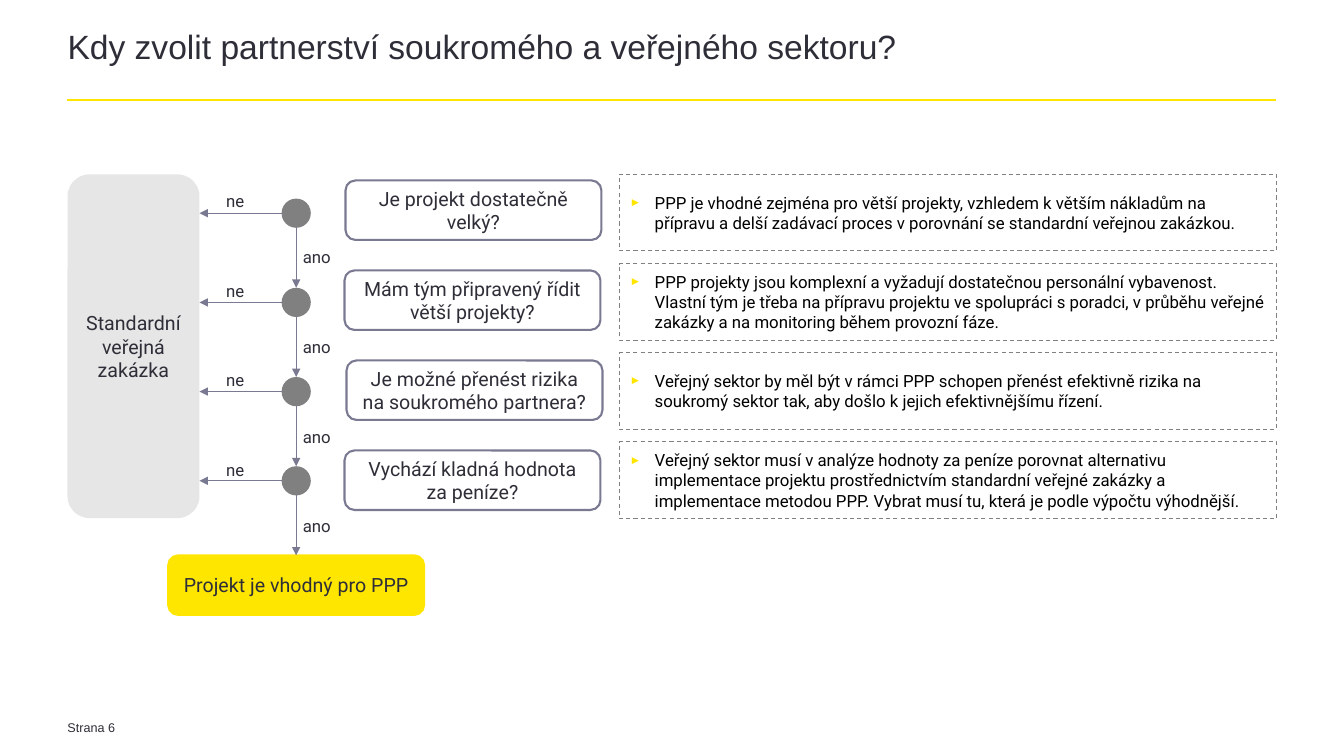
from dataclasses import dataclass
from typing import Optional

from lxml.etree import SubElement
from pptx import Presentation
from pptx.dml.color import RGBColor
from pptx.enum.dml import MSO_LINE
from pptx.enum.shapes import MSO_CONNECTOR, MSO_SHAPE
from pptx.enum.text import MSO_ANCHOR, MSO_AUTO_SIZE, PP_ALIGN
from pptx.oxml.ns import qn
from pptx.util import Inches, Pt

COLORS = {
    "dark": "2E2E38",
    "black": "000000",
    "yellow": "FFE600",
    "gray": "808080",
    "light": "E6E6E6",
    "violet": "797991",
}

LEFT, RIGHT = 0.67, 12.67
AXIS_X = 2.94
FIRST_Y = 2.115
PITCH = 0.885
DOT = 0.29
QUESTION_W, QUESTION_H = 2.54, 0.59
QUESTION_PITCH = 0.893
NOTE_H = 0.76
STANDARD_W = 1.31
RESULT_Y = 5.51


@dataclass
class Step:
    question: str
    note: str
    question_x: float


STEPS = [
    Step("Je projekt dostatečně velký?",
         "PPP je vhodné zejména pro větší projekty, vzhledem k větším nákladům na přípravu "
         "a delší zadávací proces v porovnání se standardní veřejnou zakázkou.", 3.43),
    Step("Mám tým připravený řídit větší projekty?",
         "PPP projekty jsou komplexní a vyžadují dostatečnou personální vybavenost. Vlastní tým "
         "je třeba na přípravu projektu ve spolupráci s poradci, v průběhu veřejné zakázky "
         "a na monitoring během provozní fáze.", 3.42),
    Step("Je možné přenést rizika na soukromého partnera?",
         "Veřejný sektor by měl být v rámci PPP schopen přenést efektivně rizika na soukromý "
         "sektor tak, aby došlo k jejich efektivnějšímu řízení.", 3.44),
    Step("Vychází kladná hodnota za peníze?",
         "Veřejný sektor musí v analýze hodnoty za peníze porovnat alternativu implementace "
         "projektu prostřednictvím standardní veřejné zakázky a implementace metodou PPP. "
         "Vybrat musí tu, která je podle výpočtu výhodnější.", 3.42),
]


def rgb(name: str) -> RGBColor:
    return RGBColor.from_string(COLORS[name])


def set_text(sp, text: str, size: float, color: str = "dark", font: str = "Roboto",
             align=PP_ALIGN.CENTER, anchor=MSO_ANCHOR.MIDDLE):
    tf = sp.text_frame
    tf.word_wrap = True
    tf.vertical_anchor = anchor
    tf.text = text
    p = tf.paragraphs[0]
    p.alignment = align
    f = p.runs[0].font
    f.name, f.size = font, Pt(size)
    f.color.rgb = rgb(color)
    return p


def set_insets(sp, top: float = 0) -> None:
    tf = sp.text_frame
    tf.margin_left = tf.margin_right = tf.margin_bottom = 0
    tf.margin_top = Inches(top)


def add_box(slide, kind, x: float, y: float, w: float, h: float,
            fill: Optional[str] = None, line: Optional[str] = None, width: float = 1.5):
    sp = slide.shapes.add_shape(kind, Inches(x), Inches(y), Inches(w), Inches(h))
    sp.shadow.inherit = False
    if fill:
        sp.fill.solid()
        sp.fill.fore_color.rgb = rgb(fill)
    else:
        sp.fill.background()
    if line:
        sp.line.color.rgb = rgb(line)
        sp.line.width = Pt(width)
    else:
        sp.line.fill.background()
    return sp


def add_line(slide, x1: float, y1: float, x2: float, y2: float,
             color: str = "violet", width: float = 0.75, arrow: bool = True):
    cx = slide.shapes.add_connector(MSO_CONNECTOR.STRAIGHT, Inches(x1), Inches(y1),
                                    Inches(x2), Inches(y2))
    cx.line.color.rgb = rgb(color)
    cx.line.width = Pt(width)
    if arrow:
        SubElement(cx.line._get_or_add_ln(), qn("a:tailEnd"), type="triangle")
    SubElement(cx._element.spPr, qn("a:effectLst"))
    return cx


def add_label(slide, text: str, x: float, y: float, w: float = 0.53, h: float = 0.24,
              **style):
    sp = slide.shapes.add_textbox(Inches(x), Inches(y), Inches(w), Inches(h))
    set_insets(sp, 0.04)
    return set_text(sp, text, **style)


def add_bullet(p) -> None:
    pPr = p._p.get_or_add_pPr()
    pPr.set("marL", str(Inches(0.25)))
    pPr.set("indent", str(-Inches(0.25)))
    SubElement(SubElement(pPr, qn("a:buClr")), qn("a:srgbClr"), val=COLORS["yellow"])
    SubElement(pPr, qn("a:buSzPct"), val="70000")
    SubElement(pPr, qn("a:buFont"), typeface="Arial")
    SubElement(pPr, qn("a:buChar"), char="►")


def add_title(slide, text: str) -> None:
    title = slide.shapes.title
    title.left, title.top = Inches(LEFT), Inches(0.32)
    title.width, title.height = Inches(12.01), Inches(0.65)
    p = set_text(title, text, 24, font="Arial", align=PP_ALIGN.LEFT, anchor=MSO_ANCHOR.TOP)
    p.line_spacing = 0.85
    title.text_frame.auto_size = MSO_AUTO_SIZE.NONE
    set_insets(title)
    add_line(slide, LEFT, 0.99, RIGHT, 0.99, "yellow", 1.5, arrow=False)


def add_step(slide, i: int, step: Step, result) -> None:
    """Draw one decision: dot, both answers, question and explanation."""
    y = FIRST_Y + i * PITCH
    add_box(slide, MSO_SHAPE.OVAL, AXIS_X - DOT / 2, y - DOT / 2, DOT, DOT, "gray")

    question = add_box(slide, MSO_SHAPE.ROUNDED_RECTANGLE, step.question_x,
                       1.79 + i * QUESTION_PITCH, QUESTION_W, QUESTION_H, line="violet")
    set_text(question, step.question, 14)

    note = add_box(slide, MSO_SHAPE.RECTANGLE, 6.15, 1.73 + i * PITCH, RIGHT - 6.15, NOTE_H,
                   line="gray", width=0.75)
    note.line.dash_style = MSO_LINE.DASH
    add_bullet(set_text(note, step.note, 12, "black", align=PP_ALIGN.LEFT))

    add_line(slide, AXIS_X - DOT / 2, y, LEFT + STANDARD_W, y)
    add_label(slide, "ne", 2.07, 1.85 + i * 0.89, size=12)

    down = add_line(slide, AXIS_X, y + DOT / 2, AXIS_X, y + PITCH - DOT / 2)
    if step is STEPS[-1]:
        down.end_connect(result, 0)
    add_label(slide, "ano", 2.88, 2.41 + i * 0.89, size=12)


def main() -> None:
    prs = Presentation()
    prs.slide_width, prs.slide_height = Inches(13.34), Inches(7.5)
    slide = prs.slides.add_slide(prs.slide_layouts[5])

    add_title(slide, "Kdy zvolit partnerství soukromého a veřejného sektoru?")

    standard = add_box(slide, MSO_SHAPE.ROUNDED_RECTANGLE, LEFT, 1.73, STANDARD_W, 3.41, "light")
    set_text(standard, "Standardní veřejná zakázka", 14)

    result = add_box(slide, MSO_SHAPE.ROUNDED_RECTANGLE, AXIS_X - QUESTION_W / 2, RESULT_Y,
                     QUESTION_W, QUESTION_H, "yellow", "yellow")
    set_text(result, "Projekt je vhodný pro PPP", 14)

    for i, step in enumerate(STEPS):
        add_step(slide, i, step, result)

    footer = add_label(slide, "Strana 6", LEFT, 7.12, 1, 0.17, size=9, font="Arial",
                       align=PP_ALIGN.LEFT, anchor=MSO_ANCHOR.TOP)
    footer.line_spacing = 0.85

    prs.save("out.pptx")


if __name__ == "__main__":
    main()
